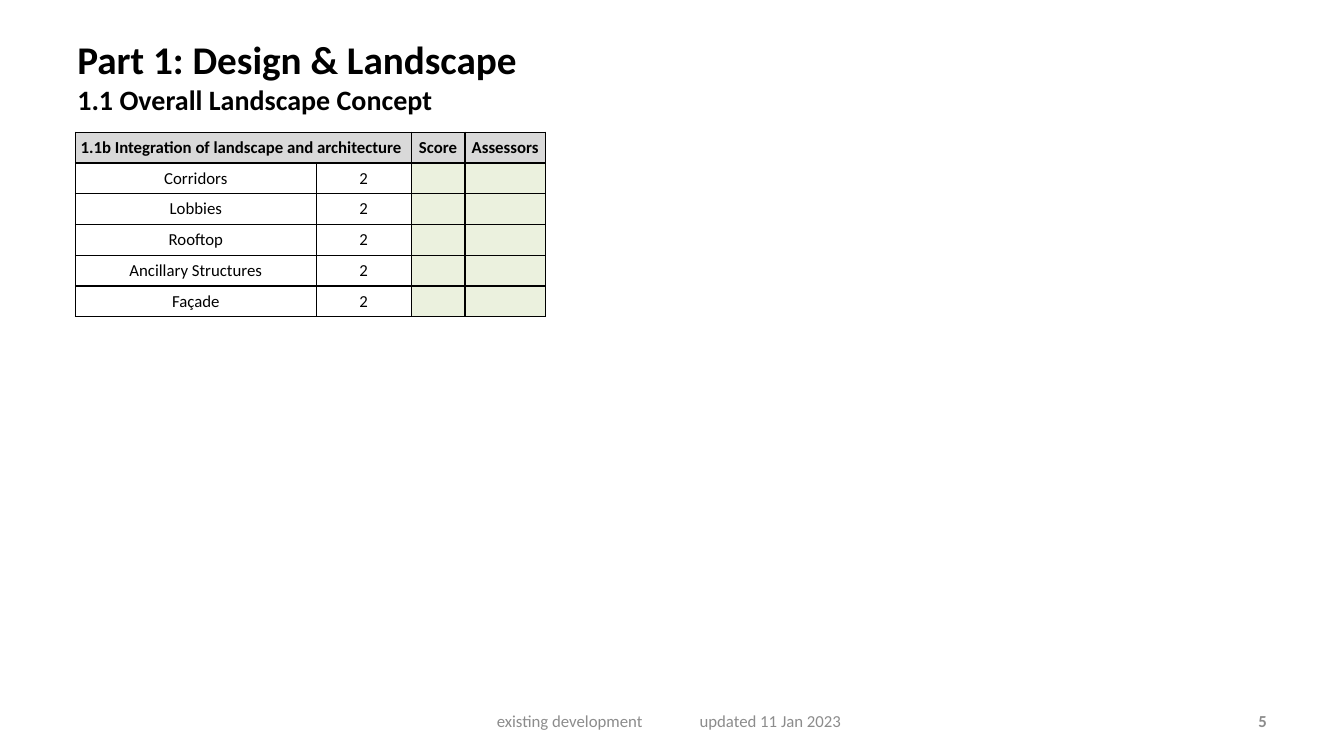
"""Build the assessment slide for the integration of landscape and architecture."""
from lxml.etree import SubElement
from pptx import Presentation
from pptx.dml.color import RGBColor
from pptx.enum.text import MSO_ANCHOR, PP_ALIGN
from pptx.oxml.ns import qn
from pptx.util import Cm, Pt

TITLE = "Part 1: Design & Landscape"
SUBTITLE = "1.1 Overall Landscape Concept"
CRITERION = "1.1b Integration of landscape and architecture"
HEADER = [CRITERION, "", "Score", "Assessors"]
PLACES = ["Corridors", "Lobbies", "Rooftop", "Ancillary Structures", "Façade"]
POINTS = "2"
FOOTER = "existing development\tupdated 11 Jan 2023"
PAGE_NUMBER = "5"

THEME = {
    "font": "Calibri",
    "title": 28, "subtitle": 20, "body": 12,
    "ink": "000000", "muted": "8C8C8C", "paper": "FFFFFF",
    "header": "D9D9D9", "entry": "EBF1DE",
    "border": 1,
}
COLUMN_WIDTHS = [6.07, 2.39, 1.36, 2.02]
ROW_HEIGHT = 0.775
CELL_INSET = 0.13
FOOTER_TOP, FOOTER_HEIGHT = 17.65, 1.02
FOOTER_INSET, FOOTER_TAB = 0.94, 5.11


def apply(target, values):
    for key, value in values.items():
        setattr(target, key, value)


def add_run(paragraph, text, size="body", color="ink", bold=False):
    run = paragraph.add_run()
    run.text = text
    apply(run.font, {"name": THEME["font"], "size": Pt(THEME[size]), "bold": bold})
    run.font.color.rgb = RGBColor.from_string(THEME[color])


def add_text(slide, left, top, width, height, align, anchor, inset=0.25):
    frame = slide.shapes.add_textbox(Cm(left), Cm(top), Cm(width), Cm(height)).text_frame
    apply(frame, {"word_wrap": True, "vertical_anchor": anchor, "margin_left": Cm(inset)})
    paragraph = frame.paragraphs[0]
    paragraph.alignment = align
    return paragraph


def add_borders(cell):
    properties = cell._tc.get_or_add_tcPr()
    for side in ("a:lnL", "a:lnR", "a:lnT", "a:lnB"):
        line = SubElement(properties, qn(side), w=str(Pt(THEME["border"])))
        fill = SubElement(line, qn("a:solidFill"))
        SubElement(fill, qn("a:srgbClr"), val=THEME["ink"])


def fill_cell(cell, text, fill, bold, align):
    add_borders(cell)
    cell.fill.solid()
    cell.fill.fore_color.rgb = RGBColor.from_string(THEME[fill])
    inset = Cm(CELL_INSET)
    apply(cell, {"vertical_anchor": MSO_ANCHOR.MIDDLE, "margin_left": inset,
                 "margin_right": inset, "margin_top": inset, "margin_bottom": inset})
    paragraph = cell.text_frame.paragraphs[0]
    paragraph.alignment = align
    if text:
        add_run(paragraph, text, bold=bold)
    else:
        SubElement(paragraph._p, qn("a:endParaRPr"), sz=str(THEME["body"] * 100))


def add_score_table(slide):
    rows = [HEADER] + [[place, POINTS, "", ""] for place in PLACES]
    table = slide.shapes.add_table(
        len(rows), len(COLUMN_WIDTHS), Cm(1.9), Cm(3.33),
        Cm(sum(COLUMN_WIDTHS)), Cm(ROW_HEIGHT * len(rows))).table
    for column, width in zip(table.columns, COLUMN_WIDTHS):
        column.width = Cm(width)
    for row_index, row in enumerate(rows):
        table.rows[row_index].height = Cm(ROW_HEIGHT)
        for column_index, text in enumerate(row):
            is_header = row_index == 0
            fill = "header" if is_header else "paper" if column_index < 2 else "entry"
            align = PP_ALIGN.LEFT if text == CRITERION else PP_ALIGN.CENTER
            fill_cell(table.cell(row_index, column_index), text, fill, is_header, align)
    table.cell(0, 0).merge(table.cell(0, 1))


def main():
    deck = Presentation()
    apply(deck, {"slide_width": Cm(33.87), "slide_height": Cm(19.05)})
    slide = deck.slides.add_slide(deck.slide_layouts[6])

    heading = add_text(slide, 1.7, 0.76, 26.31, 2.51, PP_ALIGN.LEFT, MSO_ANCHOR.TOP)
    add_run(heading, TITLE, "title", bold=True)
    heading.add_line_break()
    add_run(heading, SUBTITLE, "subtitle", bold=True)

    add_score_table(slide)

    footer = add_text(slide, 11.58, FOOTER_TOP, 10.72, FOOTER_HEIGHT,
                      PP_ALIGN.LEFT, MSO_ANCHOR.MIDDLE, FOOTER_INSET)
    tabs = SubElement(footer._p.get_or_add_pPr(), qn("a:tabLst"))
    SubElement(tabs, qn("a:tab"), pos=str(Cm(FOOTER_TAB)), algn="l")
    add_run(footer, FOOTER, color="muted")

    page = add_text(slide, 24.28, FOOTER_TOP, 7.9, FOOTER_HEIGHT,
                    PP_ALIGN.RIGHT, MSO_ANCHOR.MIDDLE)
    add_run(page, PAGE_NUMBER, color="muted", bold=True)
    deck.save("out.pptx")


if __name__ == "__main__":
    main()
